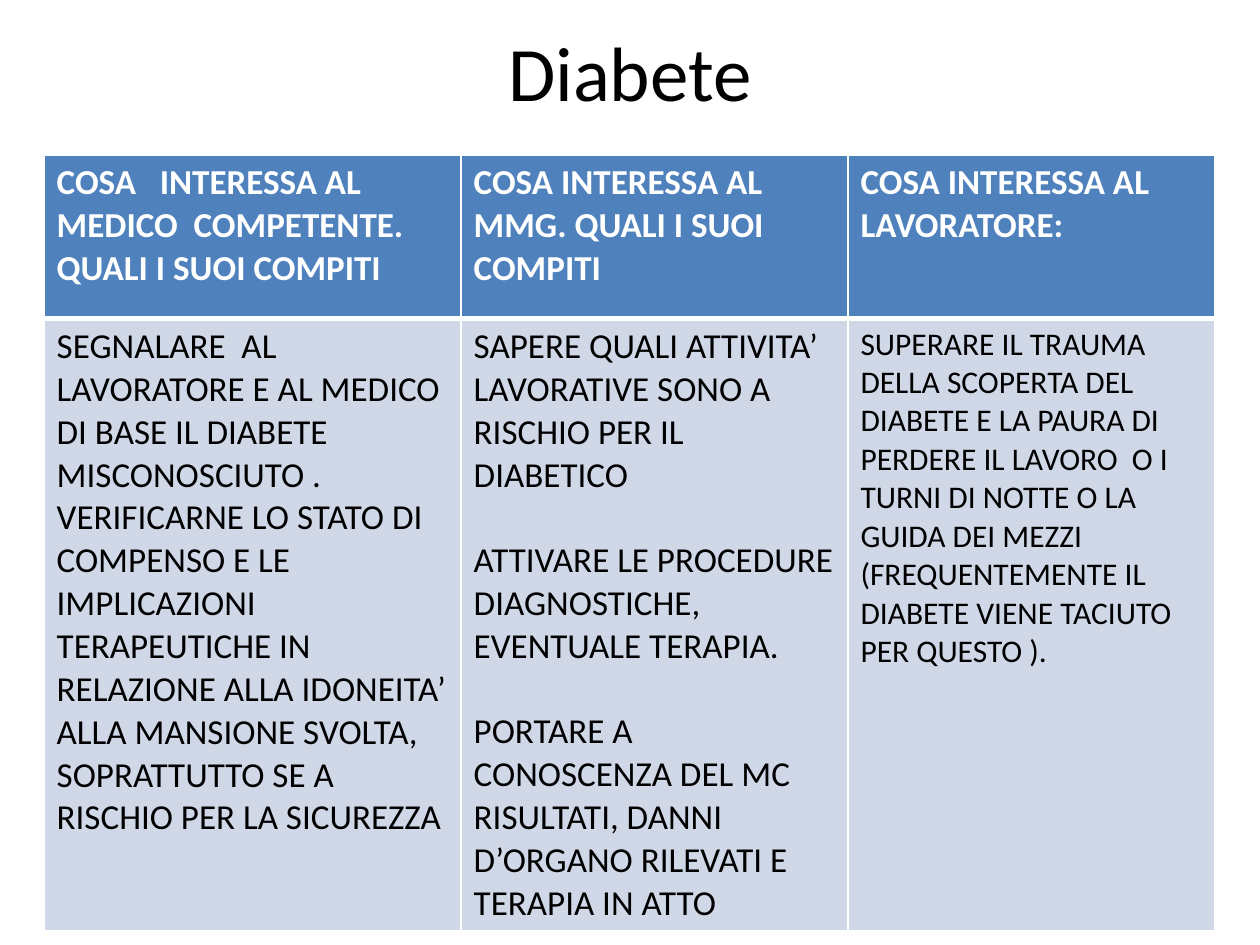
from lxml import etree
from pptx import Presentation
from pptx.dml.color import RGBColor
from pptx.enum.text import MSO_ANCHOR, PP_ALIGN
from pptx.oxml.ns import qn
from pptx.util import Inches, Pt

CENTER = PP_ALIGN.CENTER
MIDDLE = MSO_ANCHOR.MIDDLE
TOP = MSO_ANCHOR.TOP
FONT = "Calibri"
WHITE, BLACK, BLUE, PALE = "FFFFFF", "000000", "4F81BD", "D0D8E8"

COLS = [3.31, 3.07, 2.91]
ROWS = [1.3, 4.84]
HEADS = [
    "COSA   INTERESSA AL MEDICO  COMPETENTE. QUALI I SUOI COMPITI",
    "COSA INTERESSA AL MMG. QUALI I SUOI COMPITI",
    "COSA INTERESSA AL LAVORATORE:",
]
# Paragraphs, text size and gap between paragraphs for each column
BODIES = [
    (["SEGNALARE  AL LAVORATORE E AL MEDICO DI BASE IL DIABETE MISCONOSCIUTO .",
      "VERIFICARNE LO STATO DI COMPENSO E LE IMPLICAZIONI TERAPEUTICHE IN "
      "RELAZIONE ALLA IDONEITA’ ALLA MANSIONE SVOLTA, SOPRATTUTTO SE A "
      "RISCHIO PER LA SICUREZZA"], 20, 0),
    (["SAPERE QUALI ATTIVITA’ LAVORATIVE SONO A RISCHIO PER IL DIABETICO",
      "ATTIVARE LE PROCEDURE DIAGNOSTICHE, EVENTUALE TERAPIA.",
      "PORTARE A CONOSCENZA DEL MC  RISULTATI, DANNI D’ORGANO RILEVATI E "
      "TERAPIA IN ATTO"], 20, 24.4),
    (["SUPERARE IL TRAUMA DELLA SCOPERTA DEL DIABETE E LA PAURA DI PERDERE "
      "IL LAVORO  O I TURNI DI NOTTE O LA GUIDA DEI MEZZI (FREQUENTEMENTE IL "
      "DIABETE VIENE TACIUTO PER QUESTO )."], 18, 0),
]


def rgb(color):
    return RGBColor.from_string(color)


def add_run(para, text, size, color, bold=False):
    run = para.add_run()
    run.text = text
    font = run.font
    font.name, font.size, font.bold = FONT, Pt(size), bold
    font.color.rgb = rgb(color)


def add_title(slide, text):
    title = slide.shapes.title
    title.left, title.top = Inches(0.51), Inches(0.13)
    title.width, title.height = Inches(8.98), Inches(0.87)
    frame = title.text_frame
    frame.vertical_anchor = MIDDLE
    para = frame.paragraphs[0]
    para.alignment = CENTER
    add_run(para, text, 44, BLACK)


def set_edges(cell, top, bottom):
    """Draw white borders; top and bottom are widths in points."""
    props = cell._tc.get_or_add_tcPr()
    for side, width in (("L", 1), ("R", 1), ("T", top), ("B", bottom)):
        line = etree.SubElement(props, qn(f"a:ln{side}"), w=str(Pt(width)))
        fill = etree.SubElement(line, qn("a:solidFill"))
        etree.SubElement(fill, qn("a:srgbClr"), val=WHITE)


def fill_cell(cell, texts, size, gap, color, back, bold, edges):
    set_edges(cell, *edges)
    cell.fill.solid()
    cell.fill.fore_color.rgb = rgb(back)
    cell.vertical_anchor = TOP
    frame = cell.text_frame
    for i, text in enumerate(texts):
        para = frame.add_paragraph() if i else frame.paragraphs[0]
        if i:
            para.space_before = Pt(gap)
        add_run(para, text, size, color, bold)


def add_grid(slide):
    frame = slide.shapes.add_table(
        len(ROWS), len(COLS), Inches(0.35), Inches(1.23),
        Inches(sum(COLS)), Inches(sum(ROWS)))
    table = frame.table
    for row, height in zip(table.rows, ROWS):
        row.height = Inches(height)
    for i, width in enumerate(COLS):
        table.columns[i].width = Inches(width)
        fill_cell(table.cell(0, i), [HEADS[i]], 20, 0, WHITE, BLUE, True, (1, 3))
        texts, size, gap = BODIES[i]
        fill_cell(table.cell(1, i), texts, size, gap, BLACK, PALE, False, (3, 1))


def main():
    deck = Presentation()
    deck.slide_width, deck.slide_height = Inches(10), Inches(7.5)
    slide = deck.slides.add_slide(deck.slide_layouts[5])
    add_title(slide, "Diabete")
    add_grid(slide)
    deck.save("out.pptx")


if __name__ == "__main__":
    main()
